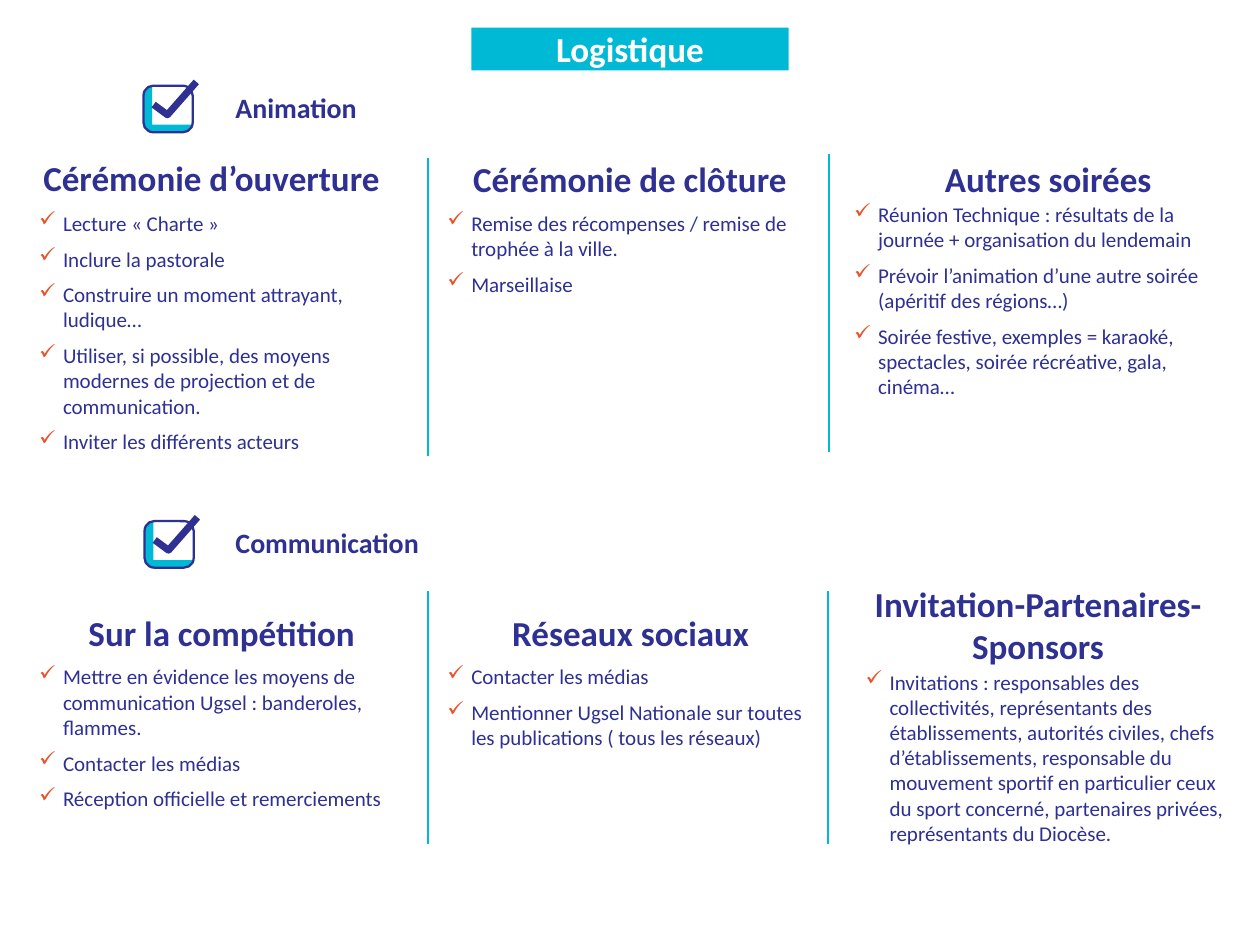
from lxml import etree
from pptx import Presentation
from pptx.dml.color import RGBColor
from pptx.enum.shapes import MSO_CONNECTOR, MSO_SHAPE
from pptx.enum.text import MSO_ANCHOR, MSO_AUTO_SIZE, PP_ALIGN
from pptx.oxml.ns import qn
from pptx.util import Pt

LINE = MSO_CONNECTOR.STRAIGHT
ROUND = MSO_SHAPE.ROUNDED_RECTANGLE
TOP = MSO_ANCHOR.TOP
FIXED = MSO_AUTO_SIZE.NONE
LEFT, MID = PP_ALIGN.LEFT, PP_ALIGN.CENTER
HEX = {"navy": "2E3092", "teal": "00BAD5", "red": "E8532B", "white": "FFFFFF"}
RGB = {name: RGBColor.from_string(code) for name, code in HEX.items()}

deck = Presentation()
deck.slide_width, deck.slide_height = Pt(720), Pt(540)
slide = deck.slides.add_slide(deck.slide_layouts[5])
shapes = slide.shapes


def place(box, area, lines, size, color="navy", bold=True, align=LEFT):
    box.left, box.top, box.width, box.height = [Pt(v) for v in area]
    frame = box.text_frame
    frame.word_wrap = True
    frame.auto_size = FIXED
    frame.vertical_anchor = TOP
    frame.margin_left = frame.margin_right = 0
    frame.margin_top = frame.margin_bottom = 0
    frame.text = "\n".join(lines)
    for para in frame.paragraphs:
        para.alignment = align
        for run in para.runs:
            run.font.name = "Calibri"
            run.font.size = Pt(size)
            run.font.bold = bold
            run.font.color.rgb = RGB[color]
    return frame


def trace(group, spots, left, top, close):
    spots = [(Pt(left + x), Pt(top + y)) for x, y in spots]
    pen = group.shapes.build_freeform(*spots[0])
    pen.add_line_segments(spots[1:], close=close)
    form = pen.convert_to_shape()
    form.shadow.inherit = False
    return form


title = shapes.title
title.fill.solid()
title.fill.fore_color.rgb = RGB["teal"]
place(title, (269.3, 15.8, 181.4, 24.5), ["Logistique"], 20, "white", align=MID)

shade = [(5, 0.7), (3.6, 0.7), (2.2, 1.4), (1.4, 2.9), (0, 5), (0, 23.8),
         (0.7, 24.5), (1.4, 25.2), (2.9, 25.9), (4.3, 26.6), (24.5, 26.6),
         (27.4, 24.5), (28.1, 23.8), (28.1, 22.3), (5, 22.3)]
tick = [(5.8, 10.8), (13.7, 16.6), (30.2, -2.2)]
heads = [("Animation", 82, 49, 51.8), ("Communication", 82.6, 297.8, 300.2)]
for label, left, top, base in heads:
    icon = shapes.add_group_shape()
    fill = trace(icon, shade, left, top, True)
    fill.fill.solid()
    fill.fill.fore_color.rgb = RGB["teal"]
    fill.line.fill.background()
    frame = icon.shapes.add_shape(ROUND, Pt(left), Pt(top), Pt(28.1), Pt(26.6))
    frame.adjustments[0] = 0.21
    frame.shadow.inherit = False
    check = trace(icon, tick, left, top, False)
    for part, width in [(frame, 1.3), (check, 4)]:
        part.fill.background()
        part.line.color.rgb = RGB["navy"]
        part.line.width = Pt(width)
    box = shapes.add_textbox(0, 0, 0, 0)
    place(box, (134.6, base, 160, 19.4), [label], 16)

blocks = [
    ("Cérémonie d’ouverture", (15.8, 89.3, 210.2, 24.5), (21.6, 119.5), [
        "Lecture « Charte »",
        "Inclure la pastorale",
        "Construire un moment attrayant, ludique…",
        "Utiliser, si possible, des moyens modernes de projection et de "
        "communication.",
        "Inviter les différents acteurs"]),
    ("Cérémonie de clôture", (254.9, 90, 210.2, 24.5), (254.9, 119.5), [
        "Remise des récompenses / remise de trophée à la ville.",
        "Marseillaise"]),
    ("Autres soirées", (493.9, 90, 210.2, 24.5), (487.4, 114.5), [
        "Réunion Technique : résultats de la journée + organisation du "
        "lendemain",
        "Prévoir l’animation d’une autre soirée (apéritif des régions…)",
        "Soirée festive, exemples = karaoké, spectacles, soirée récréative, "
        "gala, cinéma…"]),
    ("Sur la compétition", (19.4, 349.2, 214.6, 24.5), (21.6, 378.7), [
        "Mettre en évidence les moyens de communication Ugsel : banderoles, "
        "flammes.",
        "Contacter les médias",
        "Réception officielle et remerciements"]),
    ("Réseaux sociaux", (268.6, 349.2, 183.6, 24.5), (254.9, 378.7), [
        "Contacter les médias",
        "Mentionner Ugsel Nationale sur toutes les publications "
        "( tous les réseaux)"]),
    ("Invitation-Partenaires-Sponsors", (472.3, 332.6, 241.9, 48.2),
     (493.9, 381.6), [
        "Invitations : responsables des collectivités, représentants des "
        "établissements, autorités civiles, chefs d’établissements, "
        "responsable du mouvement sportif en particulier ceux du sport "
        "concerné, partenaires privées, représentants du Diocèse."]),
]
for head, area, spot, items in blocks:
    box = shapes.add_textbox(0, 0, 0, 0)
    place(box, area, [head], 20, align=MID)
    box = shapes.add_textbox(0, 0, 0, 0)
    high = 142 if len(items) == 5 else 110
    text = place(box, (*spot, 210.2, high), items, 12, bold=False)
    text.margin_top = Pt(0.7)
    for rank, para in enumerate(text.paragraphs):
        props = para._p.get_or_add_pPr()
        props.set("marL", str(Pt(14.4)))
        props.set("indent", str(-Pt(13.7)))
        tint = etree.SubElement(props, qn("a:buClr"))
        etree.SubElement(tint, qn("a:srgbClr"), val=HEX["red"])
        etree.SubElement(props, qn("a:buChar"), char="✓")
        para.space_before = Pt(6 if rank else 0)

rules = [(244.8, 90, 260.6), (473.8, 87.8, 258.5),
         (244.8, 337.7, 482.4), (473, 337.7, 482.4)]
for x, top, end in rules:
    rule = shapes.add_connector(LINE, Pt(x), Pt(top), Pt(x), Pt(end))
    rule.line.color.rgb = RGB["teal"]
    rule.line.width = Pt(1.25)
    etree.SubElement(rule._element.spPr, qn("a:effectLst"))

deck.save("out.pptx")
